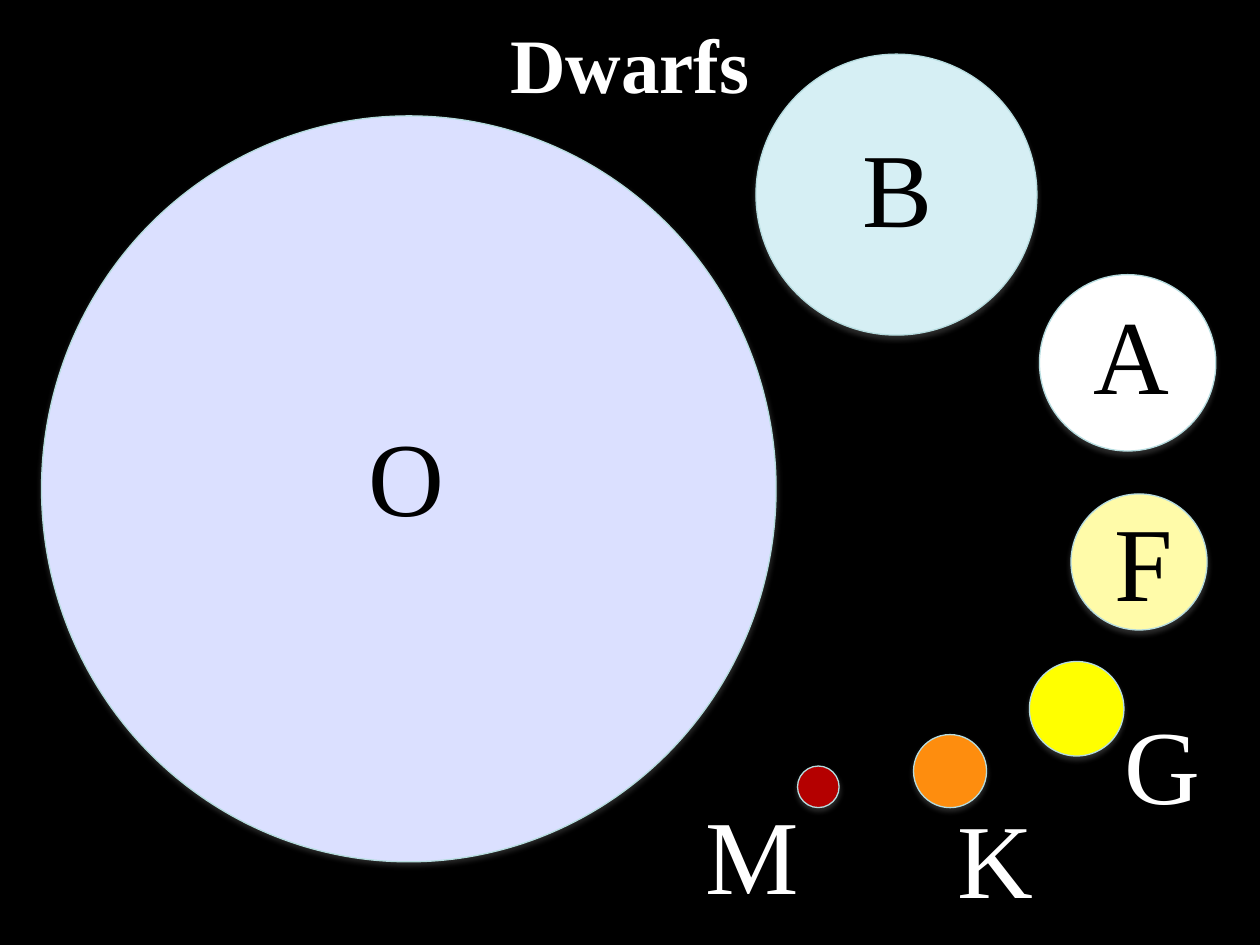
from dataclasses import dataclass

from lxml import etree
from pptx import Presentation
from pptx.dml.color import RGBColor
from pptx.enum import shapes, text
from pptx.oxml.ns import qn
from pptx.util import Inches, Pt


@dataclass(frozen=True)
class Theme:
    font: str = "Times New Roman"
    title_size: int = 44
    label_size: int = 60
    sky: str = "000000"
    light: str = "FFFFFF"
    dark: str = "000000"
    outline: str = "B6DCDF"
    shadow: str = "808080"


THEME = Theme()

# Stars: left, top, width, height, fill
STARS = [
    (6, 0.43, 2.23, 2.23, "D6EFF4"),
    (8.5, 3.92, 1.08, 1.08, "FFFBA9"),
    (7.25, 5.83, 0.58, 0.58, "FE8D0E"),
    (6.33, 6.08, 0.33, 0.33, "B40000"),
    (8.25, 2.18, 1.4, 1.4, "FFFFFF"),
    (0.33, 0.92, 5.83, 5.92, "DBE0FF"),
    (8.17, 5.25, 0.75, 0.75, "FFFF00"),
]

# Spectral classes: letter, left, top, colour
LABELS = [
    ("O", 2.83, 3.22, THEME.dark),
    ("B", 6.75, 0.92, THEME.dark),
    ("A", 8.58, 2.25, THEME.dark),
    ("F", 8.75, 3.89, THEME.dark),
    ("G", 8.83, 5.5, THEME.light),
    ("K", 7.5, 6.25, THEME.light),
    ("M", 5.5, 6.22, THEME.light),
]


def rgb(value):
    return RGBColor.from_string(value)


def add_shadow(sp):
    """Give a shape a soft shadow straight below it."""
    sp.shadow.inherit = False
    effects = sp._element.spPr.find(qn("a:effectLst"))
    shadow = etree.SubElement(
        effects, qn("a:outerShdw"), blurRad=str(Pt(3.1)), dist=str(Pt(1.8)),
        dir="5400000", rotWithShape="0")
    color = etree.SubElement(shadow, qn("a:srgbClr"), val=THEME.shadow)
    etree.SubElement(color, qn("a:alpha"), val="35000")


def add_star(s, left, top, width, height, fill):
    sp = s.shapes.add_shape(
        shapes.MSO_SHAPE.OVAL,
        Inches(left), Inches(top), Inches(width), Inches(height))
    sp.fill.solid()
    sp.fill.fore_color.rgb = rgb(fill)
    sp.line.color.rgb = rgb(THEME.outline)
    sp.line.width = Pt(0.75)
    add_shadow(sp)


def add_text(s, words, left, top, width, height, size, color, bold=False):
    sp = s.shapes.add_textbox(
        Inches(left), Inches(top), Inches(width), Inches(height))
    tf = sp.text_frame
    tf.word_wrap = True
    tf.text = words
    font = tf.paragraphs[0].runs[0].font
    font.name = THEME.font
    font.size = Pt(size)
    font.bold = bold
    font.color.rgb = rgb(color)
    return tf


def add_title(s, words):
    tf = add_text(s, words, 0, 0, 10, 1, THEME.title_size, THEME.light, True)
    tf.vertical_anchor = text.MSO_ANCHOR.MIDDLE
    tf.paragraphs[0].alignment = text.PP_ALIGN.CENTER


def add_label(s, letter, left, top, color):
    tf = add_text(s, letter, left, top, 0.75, 1.11, THEME.label_size, color)
    tf.auto_size = text.MSO_AUTO_SIZE.SHAPE_TO_FIT_TEXT


def main():
    prs = Presentation()
    prs.slide_width, prs.slide_height = Inches(10), Inches(7.5)
    s = prs.slides.add_slide(prs.slide_layouts[6])

    # Night sky and title
    s.background.fill.solid()
    s.background.fill.fore_color.rgb = rgb(THEME.sky)
    add_title(s, "Dwarfs")

    # Stars, with their letters on top
    for star in STARS:
        add_star(s, *star)
    for label in LABELS:
        add_label(s, *label)

    prs.save("out.pptx")


if __name__ == "__main__":
    main()
